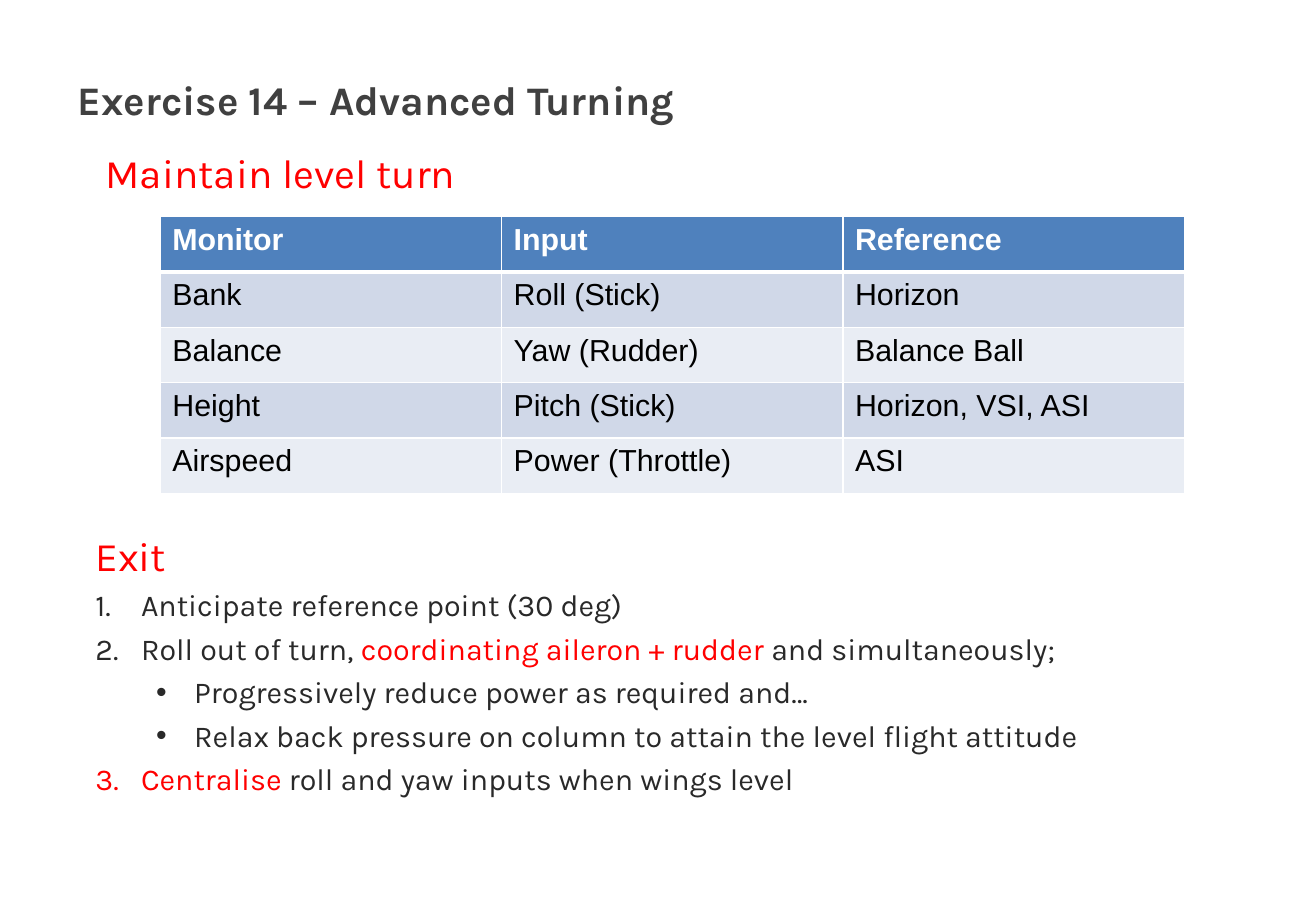
from lxml import etree
from pptx import Presentation
from pptx.dml.color import RGBColor
from pptx.enum.text import MSO_ANCHOR
from pptx.oxml.ns import qn
from pptx.util import Pt

TOP, BOTTOM = MSO_ANCHOR.TOP, MSO_ANCHOR.BOTTOM
COLORS = {
    "red": "FF0000", "title": "404040", "body": "292929", "white": "FFFFFF",
    "black": "000000", "header": "4F81BD", "odd": "D0D8E8", "even": "E9EDF4",
}
TITLE = {"name": "Karla", "size": Pt(24), "bold": True}
HEADING = {"name": "Karla", "size": Pt(24)}
BODY = {"name": "Karla", "size": Pt(18)}
CELL = {"name": "Arial", "size": Pt(18)}
NUMBER = (27, -27, "buAutoNum", {"type": "arabicPeriod"})
BULLET = (58.5, -22.5, "buChar", {"char": "•"})

CONTROLS = [
    ("Monitor", "Input", "Reference"),
    ("Bank", "Roll (Stick)", "Horizon"),
    ("Balance", "Yaw (Rudder)", "Balance Ball"),
    ("Height", "Pitch (Stick)", "Horizon, VSI, ASI"),
    ("Airspeed", "Power (Throttle)", "ASI"),
]
EXIT_STEPS = [
    (NUMBER, [("Anticipate reference point (30 deg)", "body")]),
    (NUMBER, [("Roll out of turn, ", "body"),
              ("coordinating aileron + rudder ", "red"),
              ("and simultaneously;", "body")]),
    (BULLET, [("Progressively reduce power as required and…", "body")]),
    (BULLET, [("Relax back pressure on column to attain the level flight attitude",
               "body")]),
    (NUMBER, [("Centralise", "red"),
              (" roll and yaw inputs when wings level", "body")]),
]


def rgb(color):
    """Return the named colour."""
    return RGBColor.from_string(COLORS[color])


def add_run(p, text, color, fmt):
    """Add a formatted run to a paragraph."""
    r = p.add_run()
    r.text = text
    for key, value in fmt.items():
        setattr(r.font, key, value)
    r.font.color.rgb = rgb(color)


def add_text(s, box, text, color, fmt, anchor=TOP):
    """Add a text box with one line and return its frame."""
    tf = s.shapes.add_textbox(*map(Pt, box)).text_frame
    tf.word_wrap = True
    tf.vertical_anchor = anchor
    add_run(tf.paragraphs[0], text, color, fmt)
    return tf


def add_step(tf, marker, runs):
    """Add a numbered or bulleted paragraph."""
    margin, indent, tag, attrs = marker
    p = tf.add_paragraph()
    p.level = int(marker is BULLET)
    p.space_before = Pt(4.2)
    pPr = p._p.get_or_add_pPr()
    pPr.set("marL", str(Pt(margin)))
    pPr.set("indent", str(Pt(indent)))
    if marker is BULLET:
        etree.SubElement(pPr, qn("a:buFont"), typeface="Arial")
    etree.SubElement(pPr, qn(tag.join(("a:", ""))), attrs)
    for text, color in runs:
        add_run(p, text, color, BODY)


def add_borders(cell, widths):
    """Give a cell white borders, ahead of its fill."""
    tcPr = cell._tc.get_or_add_tcPr()
    for i, (side, width) in enumerate(widths.items()):
        ln = etree.Element(qn(f"a:ln{side}"), w=str(Pt(width)))
        fill = etree.SubElement(ln, qn("a:solidFill"))
        etree.SubElement(fill, qn("a:srgbClr"), val=COLORS["white"])
        tcPr.insert(i, ln)


def add_table(s, box, rows):
    """Add a banded table with a header row."""
    table = s.shapes.add_table(len(rows), len(rows[0]), *map(Pt, box)).table
    for i, row in enumerate(rows):
        header = i == 0
        fill = "header" if header else "odd" if i % 2 else "even"
        color = "white" if header else "black"
        widths = {"L": 1, "R": 1, "T": 3 if i == 1 else 1, "B": 3 if header else 1}
        for j, text in enumerate(row):
            cell = table.cell(i, j)
            cell.fill.solid()
            cell.fill.fore_color.rgb = rgb(fill)
            add_borders(cell, widths)
            add_run(cell.text_frame.paragraphs[0], text, color,
                    {**CELL, "bold": header})


def main():
    """Build the slide and save it."""
    prs = Presentation()
    prs.slide_width, prs.slide_height = Pt(780), Pt(540)
    s = prs.slides.add_slide(prs.slide_layouts[6])
    add_text(s, (39, 15, 702, 62), "Exercise 14 – Advanced Turning", "title",
             TITLE, BOTTOM)
    add_text(s, (55.5, 84, 238, 40), "Maintain level turn", "red", HEADING)
    add_table(s, (95, 128.5, 607, 164), CONTROLS)
    tf = add_text(s, (49.5, 311, 702, 468 - 311), "Exit", "red", HEADING)
    for marker, runs in EXIT_STEPS:
        add_step(tf, marker, runs)
    prs.save("out.pptx")


if __name__ == "__main__":
    main()
